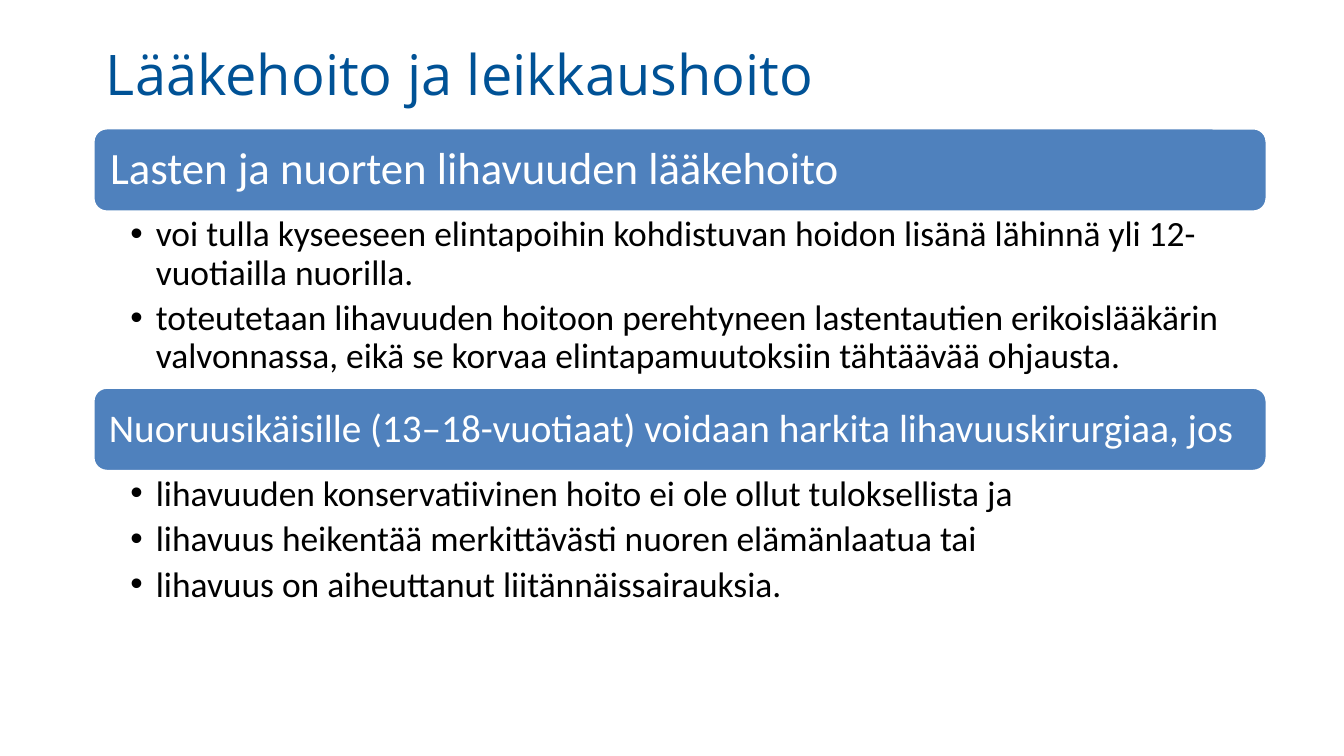
from lxml.etree import SubElement
from pptx import Presentation
from pptx.dml.color import RGBColor
from pptx.enum.shapes import MSO_SHAPE
from pptx.enum.text import MSO_ANCHOR, PP_ALIGN
from pptx.oxml.ns import qn
from pptx.util import Inches, Pt

NAVY = RGBColor(0x00, 0x52, 0x96)
BLUE = RGBColor(0x4F, 0x81, 0xBD)
WHITE = RGBColor(0xFF, 0xFF, 0xFF)
BLACK = RGBColor(0x00, 0x00, 0x00)

LEFT, WIDTH, BAR = 0.69, 8.74, 0.63

# heading, heading size, heading inset, list height, list items
SECTIONS = [
    ("Lasten ja nuorten lihavuuden lääkehoito", 24, 0.1, 1.3, [
        "voi tulla kyseeseen elintapoihin kohdistuvan hoidon lisänä "
        "lähinnä yli 12-vuotiailla nuorilla.",
        "toteutetaan lihavuuden hoitoon perehtyneen lastentautien "
        "erikoislääkärin valvonnassa, eikä se korvaa elintapamuutoksiin "
        "tähtäävää ohjausta.",
    ]),
    ("Nuoruusikäisille (13–18-vuotiaat) voidaan harkita lihavuuskirurgiaa, jos",
     21, 0.09, 1.09, [
        "lihavuuden konservatiivinen hoito ei ole ollut tuloksellista ja",
        "lihavuus heikentää merkittävästi nuoren elämänlaatua tai",
        "lihavuus on aiheuttanut liitännäissairauksia.",
    ]),
]


def set_frame(frame, anchor, left, top, right, bottom):
    frame.word_wrap = True
    frame.vertical_anchor = anchor
    margins = {"left": left, "top": top, "right": right, "bottom": bottom}
    for side, value in margins.items():
        setattr(frame, f"margin_{side}", Inches(value))


def write(para, text, size, color, name="Calibri", spacing=0.9):
    para.text = text
    para.alignment = PP_ALIGN.LEFT
    para.line_spacing = spacing
    para.font.size = Pt(size)
    para.font.name = name
    para.font.color.rgb = color


deck = Presentation()
deck.slide_width = Inches(10)
deck.slide_height = Inches(10 * 9 / 16)
slide = deck.slides.add_slide(deck.slide_layouts[6])
shapes = slide.shapes

title = shapes.add_textbox(Inches(LEFT), Inches(0.24), Inches(8.62), Inches(0.61))
set_frame(title.text_frame, MSO_ANCHOR.MIDDLE, 0.1, 0.05, 0.1, 0.05)
write(title.text_frame.paragraphs[0], "Lääkehoito ja leikkaushoito",
      30, NAVY, "Open Sans", 1.0)

top = 0.95
for heading, size, inset, height, items in SECTIONS:
    bar = shapes.add_shape(MSO_SHAPE.ROUNDED_RECTANGLE, Inches(LEFT), Inches(top),
                           Inches(WIDTH), Inches(BAR))
    bar.shadow.inherit = False
    bar.fill.solid()
    bar.fill.fore_color.rgb = BLUE
    bar.line.color.rgb = WHITE
    bar.line.width = Pt(2)
    set_frame(bar.text_frame, MSO_ANCHOR.MIDDLE, inset, inset, inset, inset)
    write(bar.text_frame.paragraphs[0], heading, size, WHITE)
    top += BAR

    box = shapes.add_textbox(Inches(LEFT), Inches(top), Inches(WIDTH), Inches(height))
    frame = box.text_frame
    set_frame(frame, MSO_ANCHOR.TOP, 0.28, 0.03, 0.19, 0.03)
    for i, item in enumerate(items):
        para = frame.add_paragraph() if i else frame.paragraphs[0]
        props = para._p.get_or_add_pPr()
        props.set("marL", str(Inches(0.19)))
        props.set("indent", str(-Inches(0.19)))
        SubElement(props, qn("a:buFont"), typeface="Arial")
        SubElement(props, qn("a:buChar"), char="•")
        write(para, item, 19, BLACK)
        para.space_after = Pt(3.8)
    top += height

deck.save("out.pptx")
